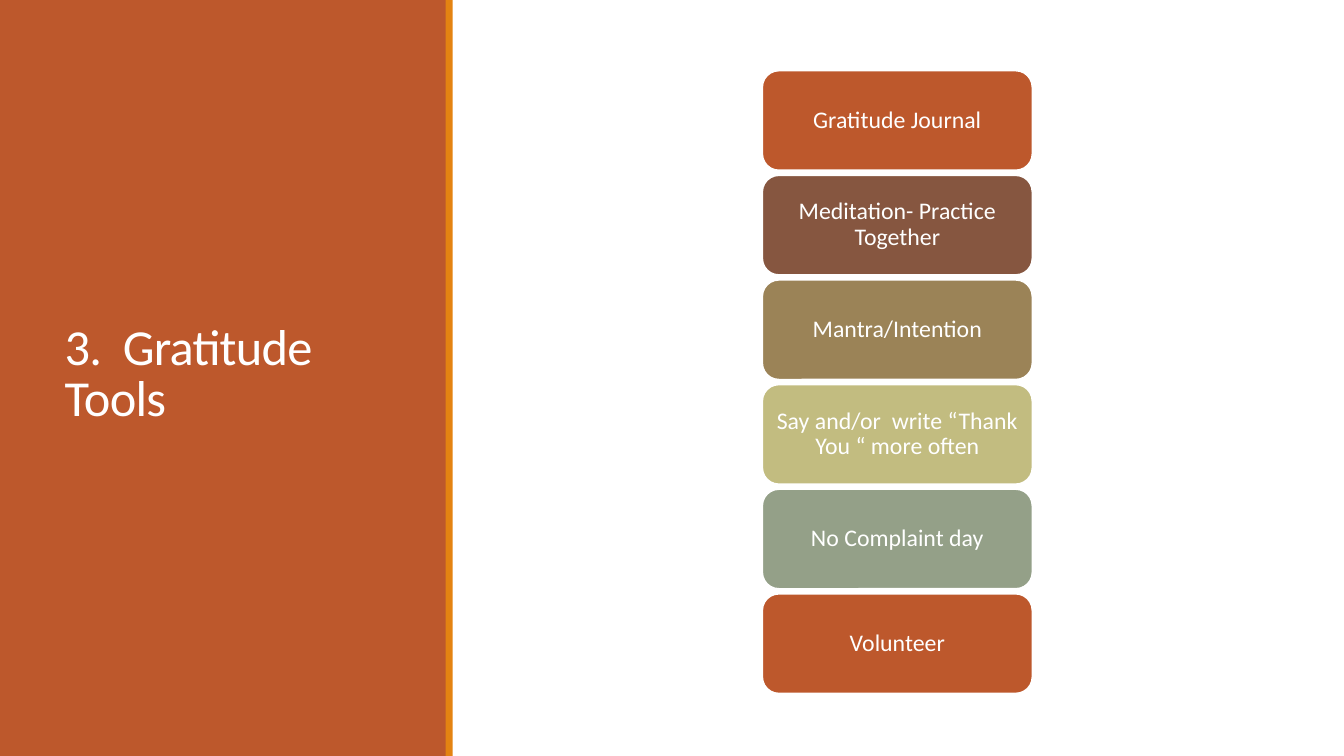
from dataclasses import dataclass

from pptx import Presentation
from pptx.dml.color import RGBColor
from pptx.enum import shapes, text
from pptx.util import Inches, Pt

# Content
TITLE = "3.  Gratitude Tools"
TOOLS = [
    ("Gratitude Journal", "BD582C"),
    ("Meditation- Practice Together", "865640"),
    ("Mantra/Intention", "9B8357"),
    ("Say and/or  write “Thank You “ more often", "C2BC80"),
    ("No Complaint day", "94A088"),
    ("Volunteer", "BD582C"),
]


@dataclass(frozen=True)
class Theme:
    font: str = "Calibri"
    white: str = "FFFFFF"
    panel: str = "BD582C"
    stripe: str = "E48312"
    title_size: int = 36
    tool_size: int = 17
    outline: float = 1.25


THEME = Theme()

# Layout in inches
SLIDE_WIDTH, SLIDE_HEIGHT = 13.33, 7.5
CARD_LEFT, CARD_TOP, CARD_WIDTH, CARD_HEIGHT = 7.56, 0.7, 2.68, 0.99
CARD_STEP = 1.038


def add_block(slide, kind, box, fill):
    shape = slide.shapes.add_shape(kind, *map(Inches, box))
    shape.shadow.inherit = False
    shape.fill.solid()
    shape.fill.fore_color.rgb = RGBColor.from_string(fill)
    shape.line.fill.background()
    return shape


def format_text(shape, size, alignment, line_spacing):
    frame = shape.text_frame
    frame.word_wrap = True
    frame.auto_size = text.MSO_AUTO_SIZE.NONE
    frame.vertical_anchor = text.MSO_ANCHOR.MIDDLE
    paragraph = frame.paragraphs[0]
    paragraph.alignment = alignment
    paragraph.line_spacing = line_spacing
    font = paragraph.runs[0].font
    font.name = THEME.font
    font.size = Pt(size)
    font.color.rgb = RGBColor.from_string(THEME.white)
    return font


def add_title(slide):
    title = slide.shapes.title
    title.left, title.top, title.width, title.height = map(
        Inches, (0.54, 0.57, 3.37, 6.31))
    title.text_frame.text = TITLE
    font = format_text(title, THEME.title_size, text.PP_ALIGN.LEFT, 0.85)
    font._element.set("spc", "-50")  # tighter letter spacing
    return title


def add_tool(slide, index, label, fill):
    box = (CARD_LEFT, CARD_TOP + index * CARD_STEP, CARD_WIDTH, CARD_HEIGHT)
    card = add_block(slide, shapes.MSO_SHAPE.ROUNDED_RECTANGLE, box, fill)
    card.line.color.rgb = RGBColor.from_string(THEME.white)
    card.line.width = Pt(THEME.outline)
    frame = card.text_frame
    frame.text = label
    frame.margin_left = frame.margin_right = Inches(0.07)
    frame.margin_top = frame.margin_bottom = Inches(0.04)
    format_text(card, THEME.tool_size, text.PP_ALIGN.CENTER, 0.9)


def main():
    presentation = Presentation()
    presentation.slide_width = Inches(SLIDE_WIDTH)
    presentation.slide_height = Inches(SLIDE_HEIGHT)
    slide = presentation.slides.add_slide(presentation.slide_layouts[5])

    # Side panel, placed behind the title
    title = add_title(slide)
    rectangle = shapes.MSO_SHAPE.RECTANGLE
    panel = add_block(slide, rectangle, (0, 0, 4.43, SLIDE_HEIGHT), THEME.panel)
    title.element.addprevious(panel.element)
    add_block(slide, rectangle, (4.42, 0, 0.07, SLIDE_HEIGHT), THEME.stripe)

    # Column of tools
    for index, (label, fill) in enumerate(TOOLS):
        add_tool(slide, index, label, fill)

    presentation.save("out.pptx")


if __name__ == "__main__":
    main()
